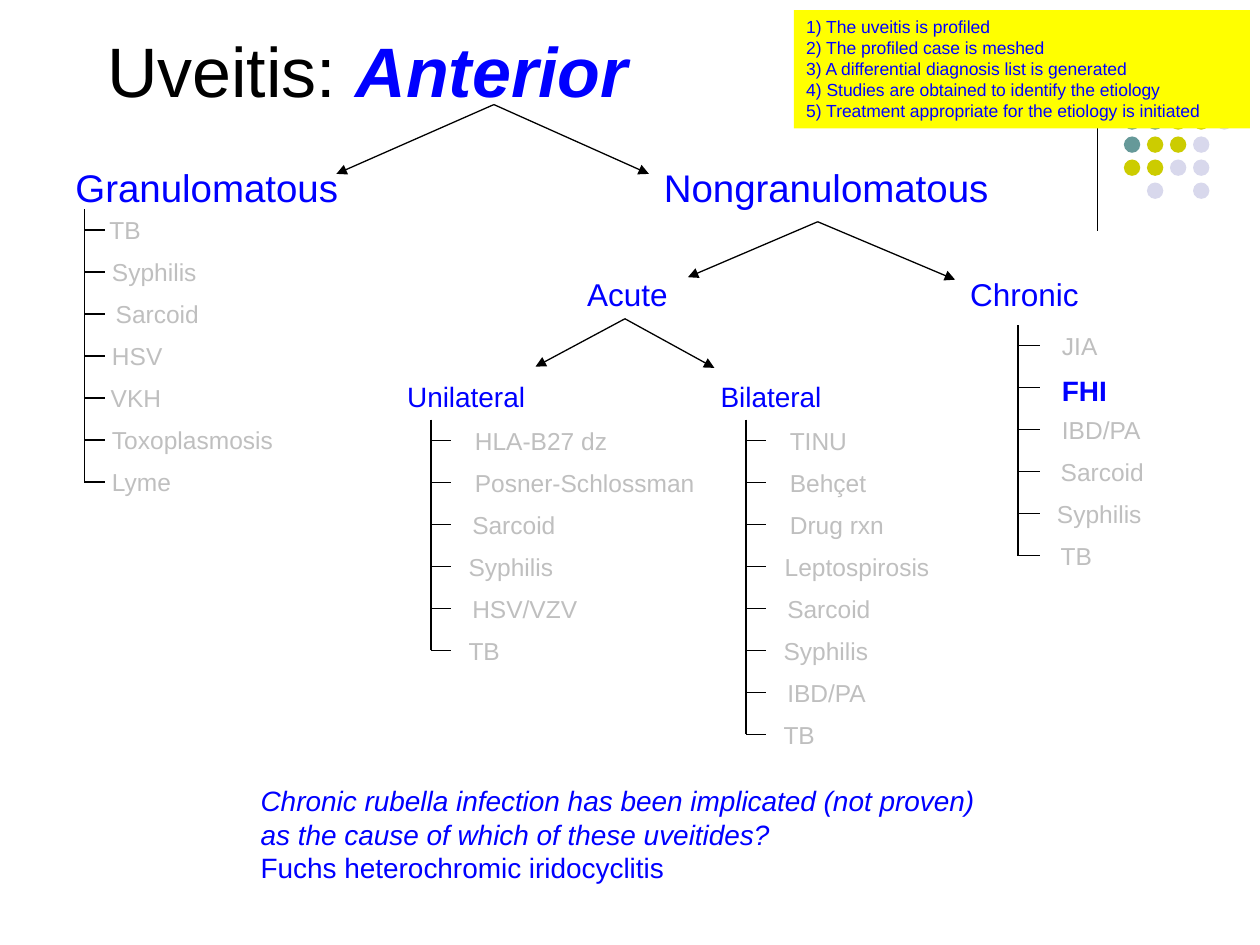
from pptx import Presentation
from pptx.dml.color import RGBColor
from pptx.enum.shapes import MSO_CONNECTOR, MSO_SHAPE
from pptx.enum.text import MSO_ANCHOR, PP_ALIGN
from pptx.oxml.ns import qn
from pptx.util import Inches, Pt
from lxml import etree

LINE = MSO_CONNECTOR.STRAIGHT
OVAL, RECT = MSO_SHAPE.OVAL, MSO_SHAPE.RECTANGLE
TOP = MSO_ANCHOR.TOP
LEFT, CENTER = PP_ALIGN.LEFT, PP_ALIGN.CENTER

COLORS = {
    "black": "000000", "blue": "0000FF", "gray": "BFBFBF", "yellow": "FFFF00",
    "teal": "669999", "olive": "CCCC00", "lilac": "D8D8EC",
}
PITCH = 1 / 3  # gap between list rows
ROW = 0.34  # height of a list row


def color(name):
    return RGBColor.from_string(COLORS[name])


def place(shape, box):
    for name, value in zip(("left", "top", "width", "height"), box):
        setattr(shape, name, Inches(value))


def write(frame, paras, wrap=True, align=LEFT):
    """Fill a frame; each paragraph is a list of (text, size, color, styles)."""
    frame.word_wrap = wrap
    frame.vertical_anchor = TOP
    for i, runs in enumerate(paras):
        para = frame.add_paragraph() if i else frame.paragraphs[0]
        para.alignment = align
        for text, size, tint, styles in runs:
            run = para.add_run()
            run.text = text
            run.font.color.rgb = color(tint)
            form = {"name": "Arial", "size": Pt(size), **styles}
            for name, value in form.items():
                setattr(run.font, name, value)


def label(slide, box, text, size, tint="blue", wrap=False, align=LEFT, **styles):
    shape = slide.shapes.add_textbox(*map(Inches, box))
    write(shape.text_frame, [[(text, size, tint, styles)]], wrap, align)


def line(slide, start, end, arrow=False):
    link = slide.shapes.add_connector(LINE, *map(Inches, (*start, *end)))
    link.line.color.rgb = color("black")
    link.line.width = Pt(0.75)
    props = link._element.spPr
    if arrow:
        etree.SubElement(props.find(qn("a:ln")), qn("a:tailEnd"), type="triangle")
    etree.SubElement(props, qn("a:effectLst"))


def solid(slide, kind, box, tint):
    shape = slide.shapes.add_shape(kind, *map(Inches, box))
    shape.shadow.inherit = False
    shape.fill.solid()
    shape.fill.fore_color.rgb = color(tint)
    shape.line.fill.background()
    return shape


def decor(slide, box):
    """Corner rule with a grid of dots."""
    left, top, width, height = box
    line(slide, (left, top), (left, top + height))
    size, step = 0.13, 0.183
    grid = ("ttool", "tool", "ooll", " l l")
    tints = {"t": "teal", "o": "olive", "l": "lilac"}
    for r, row in enumerate(grid):
        for c, mark in enumerate(row):
            if mark in tints:
                spot = (left + 0.21 + c * step, top + 0.73 + r * step, size, size)
                solid(slide, OVAL, spot, tints[mark])


def title(slide, box):
    shape = slide.shapes.title
    place(shape, box)
    write(shape.text_frame, [[
        ("Uveitis: ", 40, "black", {}),
        ("Anterior", 40, "blue", {"bold": True, "italic": True}),
    ]], wrap=False)


def steps(slide, box):
    texts = (
        "1) The uveitis is profiled",
        "2) The profiled case is meshed",
        "3) A differential diagnosis list is generated",
        "4) Studies are obtained to identify the etiology",
        "5) Treatment appropriate for the etiology is initiated",
    )
    shape = solid(slide, RECT, box, "yellow")
    write(shape.text_frame, [[(text, 10, "blue", {})] for text in texts])


def fork(slide, start, *ends):
    for end in ends:
        line(slide, start, end, arrow=True)


def branch(slide, box, items):
    """Trunk with one tick per row; items are (text, indent, width)."""
    left, top, tick = box
    first = top + 0.165
    line(slide, (left, top), (left, first + (len(items) - 1) * PITCH))
    for i, (text, indent, width) in enumerate(items):
        mid = first + i * PITCH
        line(slide, (left, mid), (left + tick, mid))
        spot = (left + indent, top + i * PITCH, width, ROW)
        if text == "FHI":
            label(slide, spot, text, 16, bold=True)
        else:
            label(slide, spot, text, 14, "gray")


def question(slide, box):
    shape = slide.shapes.add_textbox(*map(Inches, box))
    ask = ("Chronic rubella infection has been implicated (not proven) "
           "as the cause of which of these uveitides?")
    write(shape.text_frame, [
        [(ask, 16, "blue", {"italic": True})],
        [("Fuchs heterochromic iridocyclitis", 16, "blue", {})],
    ])


def tree(slide):
    # Headings
    label(slide, (0.5, 1.25, 2.31, 0.47), "Granulomatous", 22)
    label(slide, (5.17, 1.25, 2.81, 0.47), "Nongranulomatous", 22)
    for box, text, size in (
        ((4, 2.13, 1.96, 0.4), "Acute", 18),
        ((7.43, 2.13, 1.4, 0.4), "Chronic", 18),
        ((3, 2.96, 1.4, 0.37), "Unilateral", 16),
        ((5.42, 2.96, 1.4, 0.37), "Bilateral", 16),
    ):
        label(slide, box, text, size, wrap=True, align=CENTER)

    # Arrows
    fork(slide, (3.92, 0.83), (2.67, 1.38), (5.15, 1.38))
    fork(slide, (6.49, 1.76), (5.46, 2.2), (7.58, 2.22))
    fork(slide, (4.96, 2.53), (4.25, 2.91), (5.67, 2.92))

    # Lists of causes
    branch(slide, (0.67, 1.66, 0.16), (
        ("TB", 0.1, 0.45), ("Syphilis", 0.12, 0.88), ("Sarcoid", 0.15, 0.87),
        ("HSV", 0.12, 0.61), ("VKH", 0.11, 0.61),
        ("Toxoplasmosis", 0.12, 1.49), ("Lyme", 0.12, 0.67)))
    branch(slide, (3.42, 3.33, 0.16), (
        ("HLA-B27 dz", 0.25, 1.31), ("Posner-Schlossman", 0.25, 1.96),
        ("Sarcoid", 0.23, 0.87), ("Syphilis", 0.2, 0.88),
        ("HSV/VZV", 0.23, 1.04), ("TB", 0.2, 0.45)))
    branch(slide, (5.92, 3.33, 0.16), (
        ("TINU", 0.25, 0.66), ("Behçet", 0.25, 0.81), ("Drug rxn", 0.25, 0.95),
        ("Leptospirosis", 0.21, 1.36), ("Sarcoid", 0.23, 0.87),
        ("Syphilis", 0.2, 0.88), ("IBD/PA", 0.23, 0.83), ("TB", 0.2, 0.45)))
    branch(slide, (8.08, 2.58, 0.17), (
        ("JIA", 0.25, 0.49), ("FHI", 0.25, 0.56), ("IBD/PA", 0.25, 0.83),
        ("Sarcoid", 0.24, 0.87), ("Syphilis", 0.21, 0.88), ("TB", 0.24, 0.45)))


def main():
    deck = Presentation()
    deck.slide_width, deck.slide_height = Inches(10), Inches(7.5)
    slide = deck.slides.add_slide(deck.slide_layouts[5])
    decor(slide, (8.71, 0.17, 0.94, 1.66))
    title(slide, (0.75, 0.17, 4.38, 0.77))
    steps(slide, (6.3, 0.08, 3.62, 0.94))
    tree(slide)
    question(slide, (1.97, 6.17, 6.05, 0.91))
    deck.save("out.pptx")


if __name__ == "__main__":
    main()
